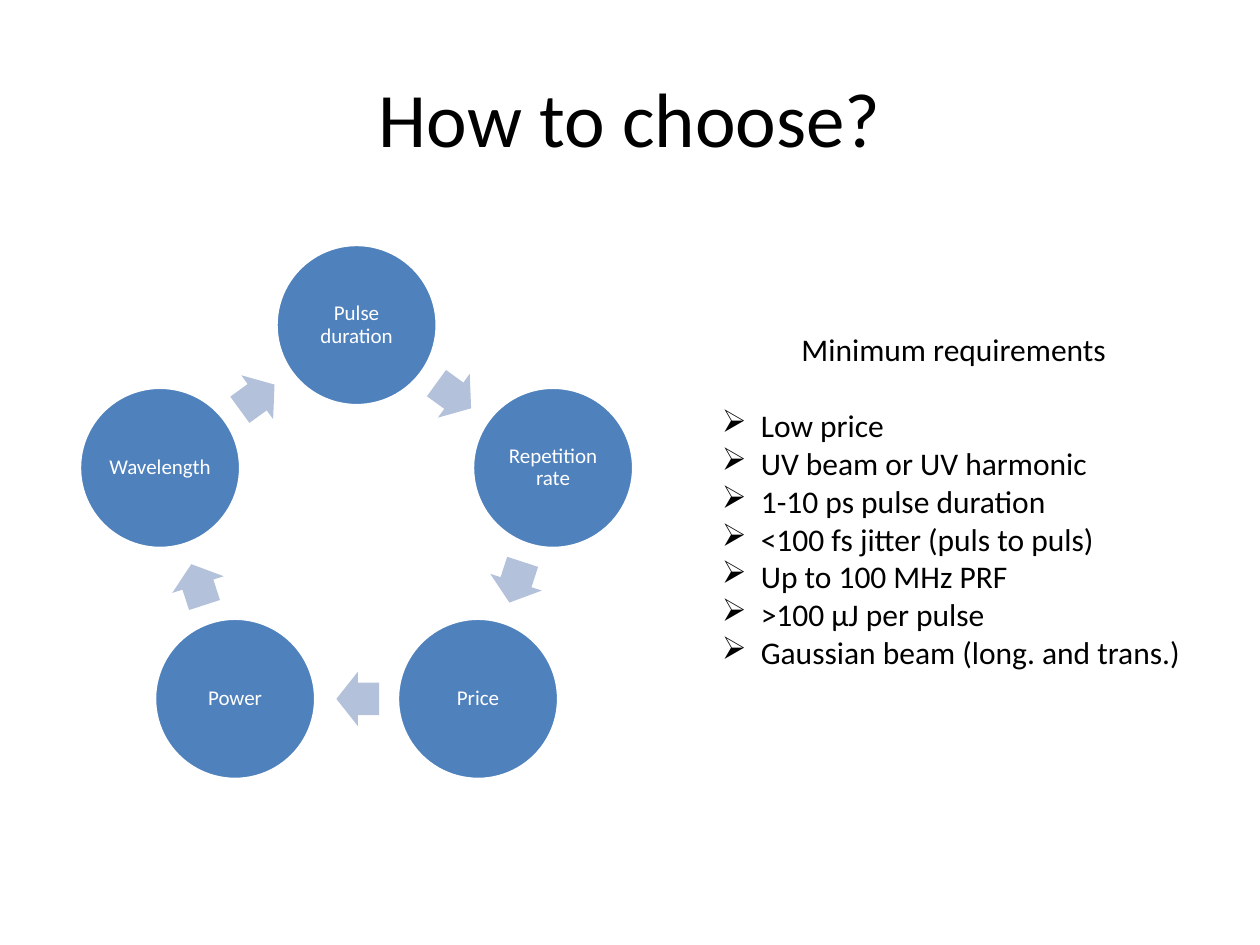
from math import cos, radians, sin

from lxml import etree
from pptx import Presentation
from pptx.dml.color import RGBColor
from pptx.enum.shapes import MSO_SHAPE as SHAPE
from pptx.enum.text import MSO_ANCHOR as ANCHOR, PP_ALIGN as ALIGN
from pptx.oxml.ns import qn
from pptx.util import Inches, Pt

COLORS = {"text": "000000", "circle": "4F81BD", "arrow": "B3C1DB", "white": "FFFFFF"}
FACTORS = ["Pulse duration", "Repetition rate", "Price", "Power", "Wavelength"]
REQUIREMENTS = [
    "Low price",
    "UV beam or UV harmonic",
    "1-10 ps pulse duration",
    "<100 fs jitter (puls to puls)",
    "Up to 100 MHz PRF",
    ">100 µJ per pulse",
    "Gaussian beam (long. and trans.)",
]


def add_run(p, text, size, color, align=ALIGN.CENTER):
    p.alignment = align
    r = p.add_run()
    r.text = text
    r.font.name = "Calibri"
    r.font.size = Pt(size)
    r.font.color.rgb = RGBColor.from_string(COLORS[color])


def add_filled(shapes, kind, cx, cy, w, h, color):
    """Add a preset shape centred on (cx, cy), in inches."""
    sp = shapes.add_shape(kind, Inches(cx - w / 2), Inches(cy - h / 2), Inches(w), Inches(h))
    sp.shadow.inherit = False
    sp.fill.solid()
    sp.fill.fore_color.rgb = RGBColor.from_string(COLORS[color])
    sp.line.fill.background()
    return sp


prs = Presentation()
prs.slide_width, prs.slide_height = Inches(10), Inches(7.5)
s = prs.slides.add_slide(prs.slide_layouts[5])

title = s.shapes.title
title.left, title.top, title.width, title.height = map(Inches, (0.5, 0.3, 9, 1.25))
title.text_frame.vertical_anchor = ANCHOR.MIDDLE
add_run(title.text_frame.paragraphs[0], "How to choose?", 44, "text")

# Cycle: circles on a ring, each followed by an arrow to the next
center_x, center_y, radius = 2.83, 4.22, 1.64
step = 360 / len(FACTORS)
arrow_radius = radius * cos(radians(step / 2))
arrow_shift = 0.01  # each arrow sits slightly before the midpoint
cycle = s.shapes.add_group_shape()
for i, factor in enumerate(FACTORS):
    angle = radians(i * step)
    circle = add_filled(cycle.shapes, SHAPE.OVAL, center_x + radius * sin(angle),
                        center_y - radius * cos(angle), 1.28, 1.28, "circle")
    circle.line.color.rgb = RGBColor.from_string(COLORS["white"])
    circle.line.width = Pt(2)
    tf = circle.text_frame
    tf.word_wrap = True
    tf.vertical_anchor = ANCHOR.MIDDLE
    tf.margin_left = tf.margin_right = tf.margin_top = tf.margin_bottom = Inches(0.02)
    tf.paragraphs[0].line_spacing = 0.9
    add_run(tf.paragraphs[0], factor, 12, "white")

    heading = (i + 0.5) * step
    angle = radians(heading)
    arrow = add_filled(cycle.shapes, SHAPE.RIGHT_ARROW,
                       center_x + arrow_radius * sin(angle) - arrow_shift * cos(angle),
                       center_y - arrow_radius * cos(angle) - arrow_shift * sin(angle),
                       0.34, 0.43, "arrow")
    arrow.adjustments[0], arrow.adjustments[1] = 0.6, 0.5
    arrow.rotation = heading

# Requirements list
box = s.shapes.add_textbox(Inches(5.63), Inches(2.57), Inches(3.88), Inches(3.43))
tf = box.text_frame
tf.word_wrap = True
p = tf.paragraphs[0]
p.space_after = Pt(22)
add_run(p, "Minimum requirements", 18, "text")
for requirement in REQUIREMENTS:
    p = tf.add_paragraph()
    add_run(p, requirement, 18, "text", ALIGN.LEFT)
    pPr = p._p.get_or_add_pPr()
    pPr.set("marL", str(Inches(0.31)))
    pPr.set("indent", str(-Inches(0.31)))
    etree.SubElement(pPr, qn("a:buChar")).set("char", "➢")

prs.save("out.pptx")
